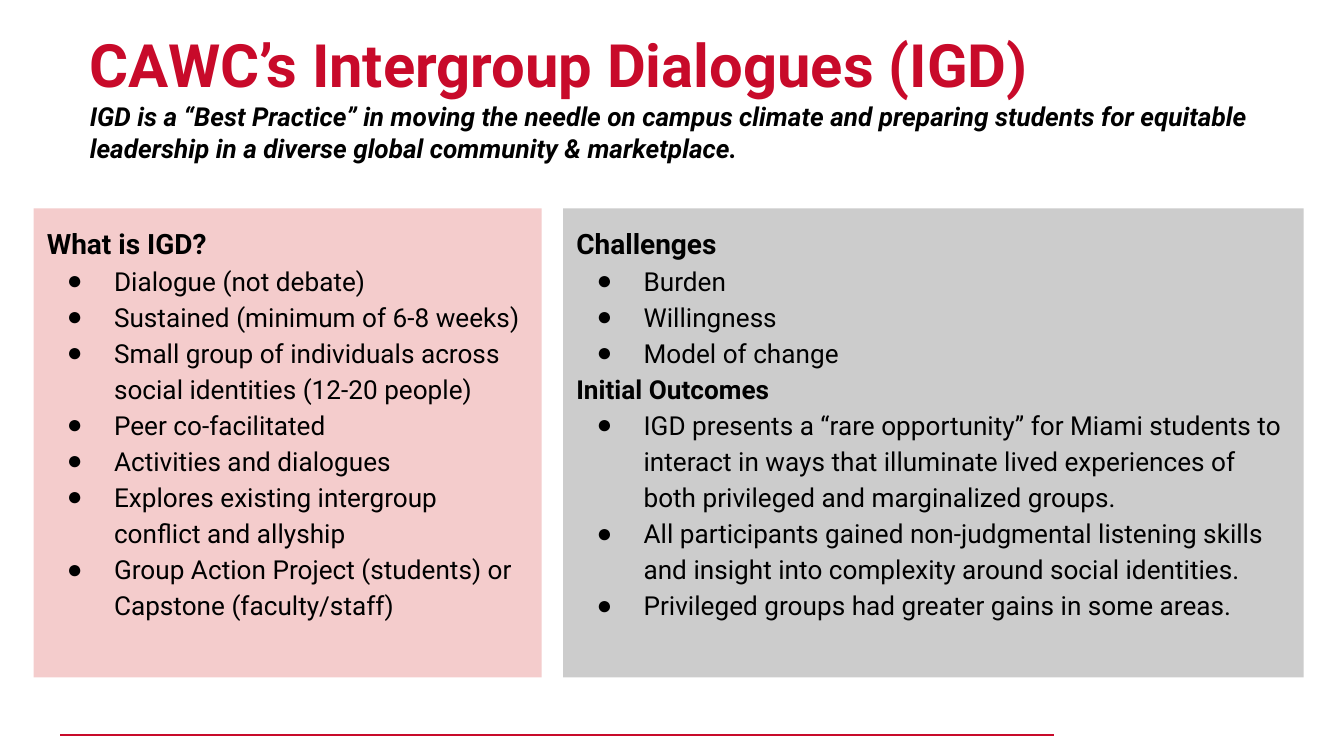
import pptx
import pptx.dml.color
import pptx.enum.shapes
import pptx.enum.text
import pptx.oxml
import pptx.oxml.ns
import pptx.util

Inches = pptx.util.Inches
RGBColor = pptx.dml.color.RGBColor

RED = RGBColor(0xC8, 0x0A, 0x2A)
PINK = RGBColor(0xF4, 0xCC, 0xCC)
GRAY = RGBColor(0xCC, 0xCC, 0xCC)
BLACK = RGBColor(0, 0, 0)
FONT = "Roboto"
BULLET_FONT = "Arial"

TITLE = "CAWC’s Intergroup Dialogues (IGD)"
SUBTITLE = (
    "IGD is a “Best Practice” in moving the needle on campus climate and preparing "
    "students for equitable leadership in a diverse global community & marketplace."
)

# Each panel: left, width, fill, sections of (heading, heading size, bullets)
PANELS = [
    (0.25, 3.78, PINK, [
        ("What is IGD?", 15, [
            "Dialogue (not debate)",
            "Sustained (minimum of 6-8 weeks)",
            "Small group of individuals across social identities (12-20 people)",
            "Peer co-facilitated",
            "Activities and dialogues",
            "Explores existing intergroup conflict and allyship",
            "Group Action Project (students) or Capstone (faculty/staff)",
        ]),
    ]),
    (4.19, 5.51, GRAY, [
        ("Challenges", 15, ["Burden", "Willingness", "Model of change"]),
        ("Initial Outcomes", 14, [
            "IGD presents a “rare opportunity” for Miami students to interact in ways "
            "that illuminate lived experiences of both privileged and marginalized groups.",
            "All participants gained non-judgmental listening skills and insight into "
            "complexity around social identities.",
            "Privileged groups had greater gains in some areas.",
        ]),
    ]),
]
PANEL_TOP, PANEL_HEIGHT = 1.55, 3.49


def add_bullet(paragraph):
    properties = paragraph._p.get_or_add_pPr()
    properties.set("marL", str(Inches(0.5)))
    properties.set("indent", str(Inches(-0.35)))
    namespace = pptx.oxml.ns.nsdecls("a")
    for xml in (
        f'<a:buClr {namespace}><a:srgbClr val="{BLACK}"/></a:buClr>',
        f'<a:buFont {namespace} typeface="{BULLET_FONT}"/>',
        f'<a:buChar {namespace} char="●"/>',
    ):
        properties.append(pptx.oxml.parse_xml(xml))


def write(paragraph, text, size=14, color=BLACK, bold=False, italic=False,
          spacing=None, bullet=False):
    paragraph.alignment = pptx.enum.text.PP_ALIGN.LEFT
    if spacing:
        paragraph.line_spacing = spacing
    if bullet:
        add_bullet(paragraph)
    span = paragraph.add_run()
    span.text = text
    font = span.font
    font.name, font.size = FONT, pptx.util.Pt(size)
    font.bold, font.italic = bold, italic
    font.color.rgb = color


def prepare_frame(box, inset):
    """Set wrapping, top anchoring and insets, and return the text frame."""
    frame = box.text_frame
    frame.word_wrap = True
    frame.vertical_anchor = pptx.enum.text.MSO_ANCHOR.TOP
    frame.margin_left = frame.margin_right = Inches(0.1)
    frame.margin_top = frame.margin_bottom = Inches(inset)
    return frame


def add_panel(page, left, width, fill, sections):
    panel = page.shapes.add_shape(
        pptx.enum.shapes.MSO_SHAPE.RECTANGLE,
        Inches(left), Inches(PANEL_TOP), Inches(width), Inches(PANEL_HEIGHT))
    panel.shadow.inherit = False
    panel.fill.solid()
    panel.fill.fore_color.rgb = fill
    panel.line.fill.background()
    frame = prepare_frame(panel, 0.1)
    lines = []
    for heading, size, bullets in sections:
        lines.append((heading, dict(size=size, bold=True)))
        lines += [(text, dict(bullet=True)) for text in bullets]
    for index, (text, style) in enumerate(lines):
        paragraph = frame.add_paragraph() if index else frame.paragraphs[0]
        write(paragraph, text, spacing=1.15, **style)


def add_footer_rule(page):
    rule = page.shapes.add_connector(
        pptx.enum.shapes.MSO_CONNECTOR.STRAIGHT,
        Inches(7.84), Inches(5.47), Inches(0.45), Inches(5.47))
    rule.line.color.rgb = RED
    rule.line.width = pptx.util.Pt(1)
    rule._element.spPr.append(
        pptx.oxml.parse_xml(f'<a:effectLst {pptx.oxml.ns.nsdecls("a")}/>'))


def main():
    deck = pptx.Presentation()
    deck.slide_width = Inches(10)
    deck.slide_height = deck.slide_width * 9 // 16
    page = deck.slides.add_slide(deck.slide_layouts[6])
    add_footer_rule(page)

    title = page.shapes.add_textbox(
        Inches(0.57), Inches(0.16), Inches(8.62), Inches(1.09))
    write(prepare_frame(title, 0.05).paragraphs[0], TITLE,
          size=32, color=RED, bold=True)
    subtitle = page.shapes.add_textbox(
        Inches(0.57), Inches(0.7), Inches(8.93), Inches(0.84))
    write(prepare_frame(subtitle, 0.05).paragraphs[0], SUBTITLE,
          bold=True, italic=True)

    for panel in PANELS:
        add_panel(page, *panel)
    deck.save("out.pptx")


if __name__ == "__main__":
    main()
